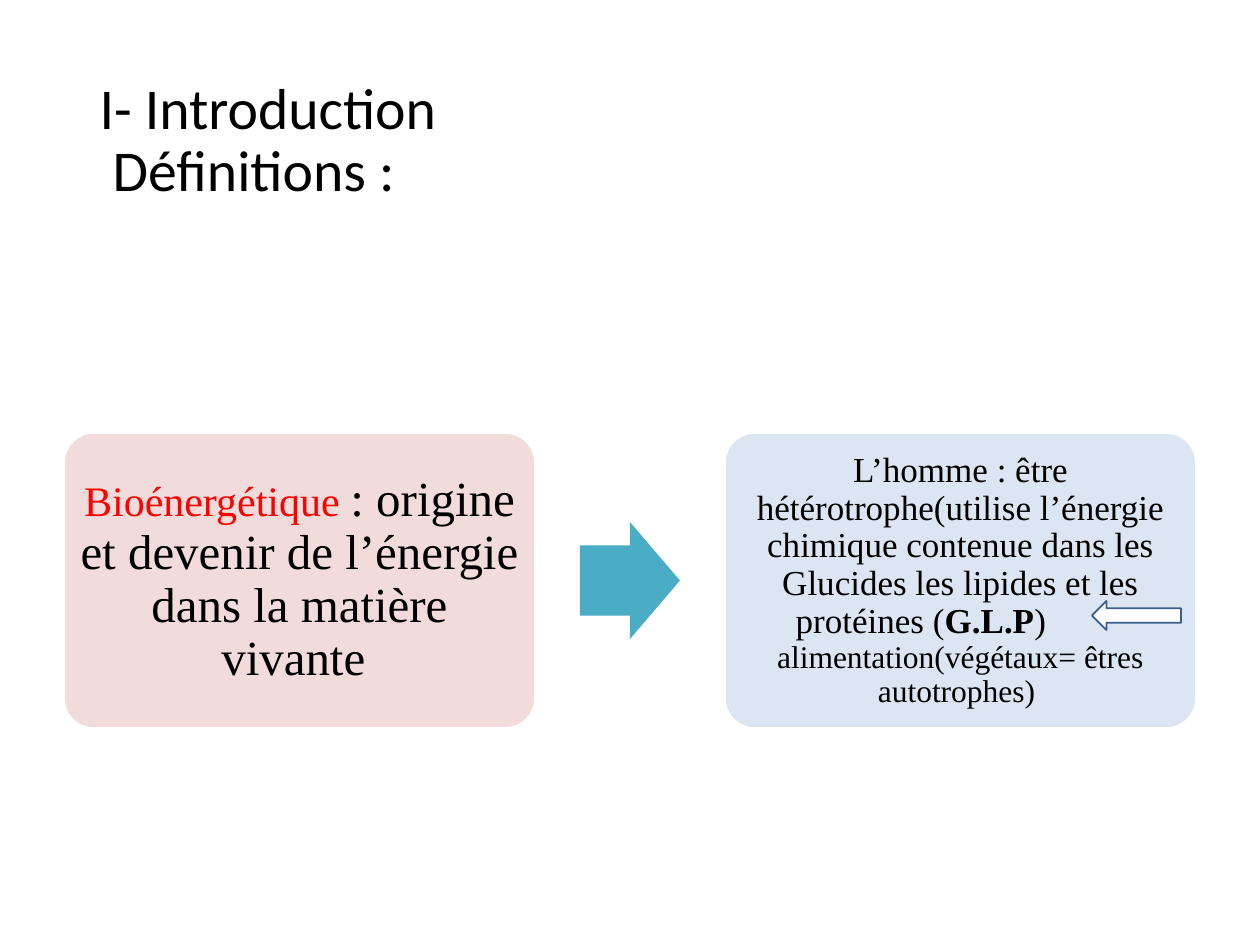
from pptx import Presentation
from pptx.dml.color import RGBColor
from pptx.enum.shapes import MSO_SHAPE
from pptx.enum.text import MSO_ANCHOR, MSO_AUTO_SIZE, PP_ALIGN
from pptx.util import Emu, Pt

PX = 914400 // 126  # one px in EMU

THEME = {
    "title_font": "Calibri", "body_font": "Times New Roman",
    "title_size": 33, "large": 28, "term": 24, "body": 20, "small": 18,
    "text": "000000", "accent": "FF0000", "paper": "FFFFFF",
    "rose": "F2DCDB", "blue": "DCE6F2", "teal": "4BACC6", "outline": "3A5F8C",
}

# Content: a run is (text, size, colour, bold); a paragraph is (indent in px, runs)
TITLE = "I- Introduction\v Définitions :"
CARDS = [
    {"fill": "rose", "inset": 4, "paragraphs": [
        (0, [("Bioénergétique ", "term", "accent", False),
             (": origine et devenir de l’énergie dans la matière vivante ", "large", "text", False)]),
    ]},
    {"fill": "blue", "inset": 1, "paragraphs": [
        (0, [("L’homme : être hétérotrophe(utilise l’énergie chimique contenue "
              "dans les Glucides les lipides et les", "body", "text", False)]),
        # indented to leave room for the small arrow
        (61, [("protéines (", "body", "text", False),
              ("G.L.P", "body", "text", True),
              (")", "body", "text", False)]),
        (0, [("alimentation(végétaux= êtres autotrophes) ", "small", "text", False)]),
    ]},
]

# Layout in px
SLIDE = (1260, 945)
TITLE_BOX = (87, 50, 1086, 183)
CARD_LEFT, CARD_TOP, CARD_WIDTH, CARD_HEIGHT = 64, 433, 471, 295
CARD_STEP = SLIDE[0] - 2 * CARD_LEFT - CARD_WIDTH
ARROW_WIDTH, ARROW_HEIGHT = 100, 117
SMALL_ARROW = (1092, 601, 89, 29)


def color(name):
    return RGBColor.from_string(THEME[name])


def add_shape(slide, kind, box, fill, line=None, adjustments=()):
    shape = slide.shapes.add_shape(kind, *(Emu(value * PX) for value in box))
    shape.shadow.inherit = False
    shape.fill.solid()
    shape.fill.fore_color.rgb = color(fill)
    if line:
        shape.line.color.rgb = color(line)
        shape.line.width = Pt(1)
    else:
        shape.line.fill.background()
    for index, value in enumerate(adjustments):
        shape.adjustments[index] = value
    return shape


def format_run(run, font, size, color_name, bold=False):
    run.font.name = THEME[font]
    run.font.size = Pt(THEME[size])
    run.font.color.rgb = color(color_name)
    run.font.bold = bold


def add_title(slide):
    title = slide.shapes.title
    title.left, title.top, title.width, title.height = (Emu(value * PX) for value in TITLE_BOX)
    frame = title.text_frame
    frame.text = TITLE
    frame.auto_size = MSO_AUTO_SIZE.NONE
    frame.vertical_anchor = MSO_ANCHOR.MIDDLE
    paragraph = frame.paragraphs[0]
    paragraph.alignment = PP_ALIGN.LEFT
    paragraph.line_spacing = 0.9
    for run in paragraph.runs:
        format_run(run, "title_font", "title_size", "text")


def fill_card(card, content):
    frame = card.text_frame
    frame.word_wrap = True
    frame.vertical_anchor = MSO_ANCHOR.MIDDLE
    inset = Emu(content["inset"] * PX)
    frame.margin_left = frame.margin_right = frame.margin_top = frame.margin_bottom = inset
    for index, (indent, runs) in enumerate(content["paragraphs"]):
        paragraph = frame.add_paragraph() if index else frame.paragraphs[0]
        paragraph.alignment = PP_ALIGN.LEFT if indent else PP_ALIGN.CENTER
        paragraph.line_spacing = 0.9
        if indent:
            paragraph._p.get_or_add_pPr().set("marL", str(indent * PX))
        for text, size, color_name, bold in runs:
            run = paragraph.add_run()
            run.text = text
            format_run(run, "body_font", size, color_name, bold)


def main():
    presentation = Presentation()
    presentation.slide_width, presentation.slide_height = (Emu(value * PX) for value in SLIDE)
    slide = presentation.slides.add_slide(presentation.slide_layouts[5])
    add_title(slide)

    # Definition cards
    for index, content in enumerate(CARDS):
        box = (CARD_LEFT + index * CARD_STEP, CARD_TOP, CARD_WIDTH, CARD_HEIGHT)
        card = add_shape(slide, MSO_SHAPE.ROUNDED_RECTANGLE, box, content["fill"], "paper", [0.1])
        fill_card(card, content)

    # Arrow centred between the cards
    arrow_box = ((SLIDE[0] - ARROW_WIDTH) // 2,
                 CARD_TOP + (CARD_HEIGHT - ARROW_HEIGHT) // 2, ARROW_WIDTH, ARROW_HEIGHT)
    add_shape(slide, MSO_SHAPE.RIGHT_ARROW, arrow_box, "teal", adjustments=[0.6, 0.5])

    # Small arrow pointing at G.L.P
    add_shape(slide, MSO_SHAPE.LEFT_ARROW, SMALL_ARROW, "paper", "outline")

    presentation.save("out.pptx")


if __name__ == "__main__":
    main()
